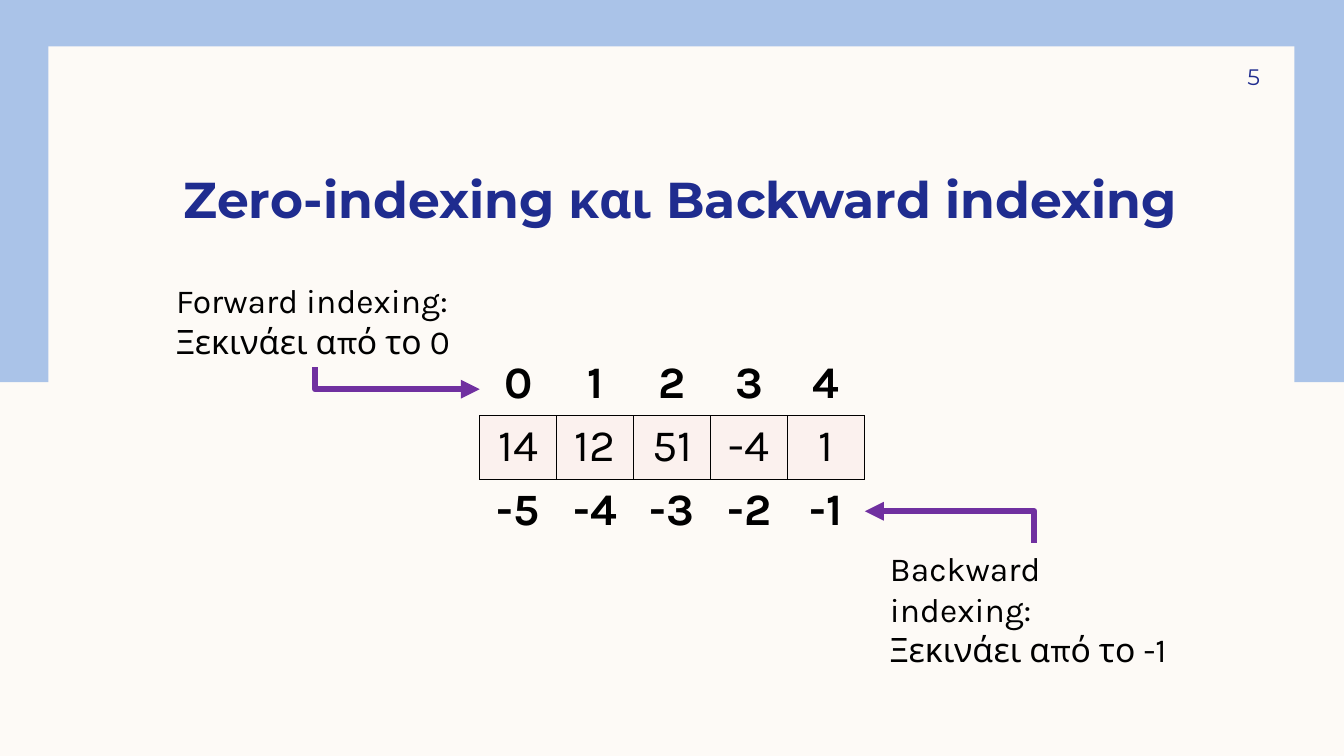
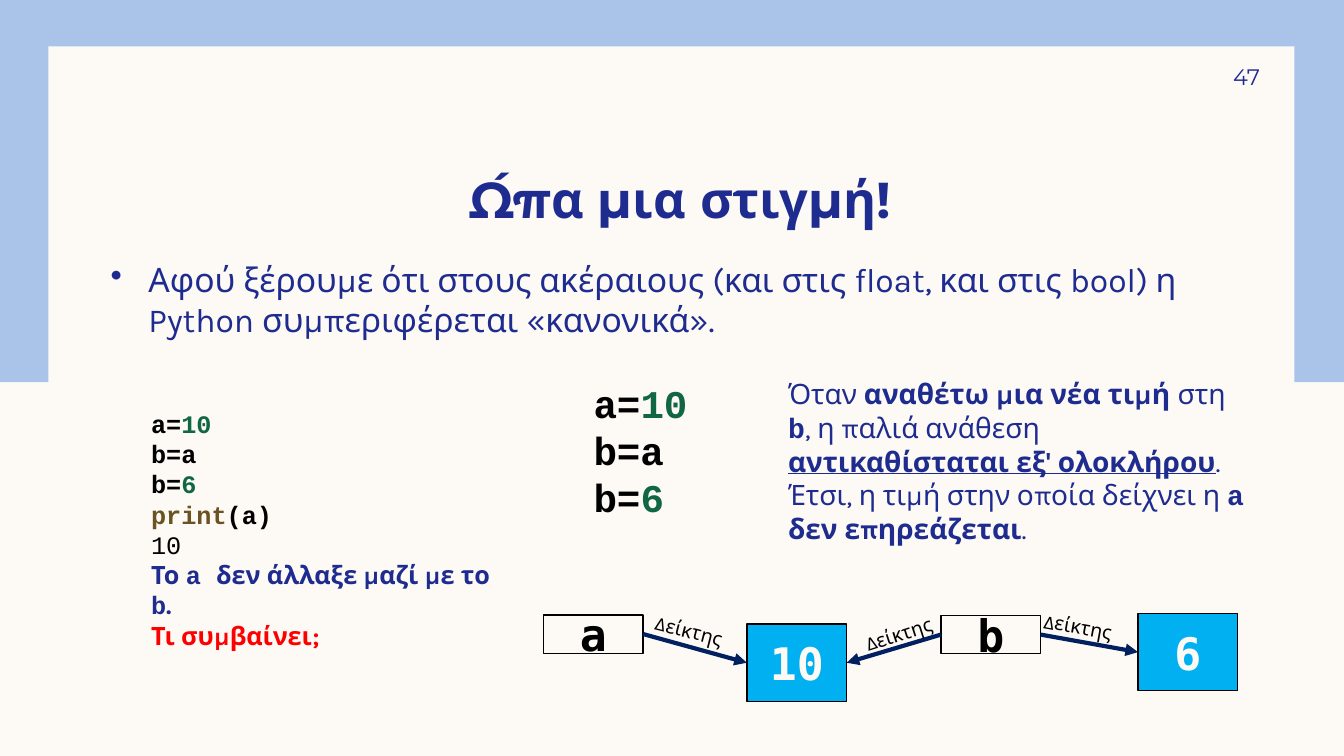
"""Build two slides on list indexing and on how names point to values."""
from pptx import Presentation
from pptx.dml.color import RGBColor
from pptx.enum.shapes import MSO_CONNECTOR, MSO_SHAPE
from pptx.enum.text import MSO_ANCHOR, MSO_AUTO_SIZE, PP_ALIGN
from pptx.oxml.ns import qn
from pptx.util import Pt
from lxml import etree

RECT = MSO_SHAPE.RECTANGLE
LINE, ELBOW = MSO_CONNECTOR.STRAIGHT, MSO_CONNECTOR.ELBOW
TOP, MID, LOW = MSO_ANCHOR.TOP, MSO_ANCHOR.MIDDLE, MSO_ANCHOR.BOTTOM
LEFT, MIDST, RIGHT = PP_ALIGN.LEFT, PP_ALIGN.CENTER, PP_ALIGN.RIGHT

CREAM = RGBColor(0xFD, 0xFA, 0xF6)
SKY = RGBColor(0xAA, 0xC3, 0xE8)
NAVY = RGBColor(0x1F, 0x2C, 0x8F)
BLACK = RGBColor(0, 0, 0)
GREEN = RGBColor(0x11, 0x66, 0x44)
BROWN = RGBColor(0x6A, 0x52, 0x21)
RED = RGBColor(0xFF, 0, 0)
PINK = RGBColor(0xFB, 0xF1, 0xEE)
PURPLE = RGBColor(0x70, 0x30, 0xA0)
AZURE = RGBColor(0, 0xB0, 0xF0)
INK = RGBColor(0x00, 0x20, 0x60)
HEAD, BODY, CODE, MONO = "Montserrat", "Karla", "Courier New", "DejaVu Sans Mono"
PLAIN_GRID = "{2D5ABB26-0587-4C30-8999-92F81FD0307C}"

STYLES = {
    "head": (HEAD, NAVY, True),
    "page": (HEAD, NAVY, False),
    "note": (BODY, BLACK, False),
    "index": (BODY, BLACK, True),
    "body": (BODY, NAVY, False),
    "bold": (BODY, NAVY, True),
    "under": (BODY, NAVY, True, True),
    "alert": (BODY, RED, True),
    "code": (CODE, BLACK, True),
    "num": (CODE, GREEN, True),
    "call": (CODE, BROWN, True),
    "out": (CODE, BLACK, False),
    "var": (CODE, NAVY, True),
    "name": (MONO, BLACK, True),
    "value": (MONO, CREAM, True),
}

BANDS = [((-2, 0, 962, 273), SKY), ((34.6, 33.1, 890, 474.5), CREAM)]
TITLE = (72, 83.5, 828, 80)
PAGE = (815.8, 36, 84.2, 37.4)

GRID = [
    ["0", "1", "2", "3", "4"],
    ["14", "12", "51", "-4", "1"],
    ["-5", "-4", "-3", "-2", "-1"],
]
GRID_AT, CELL = (342.7, 251.3), (55, 45.6)
NOTES = [
    ((118.8, 196.6, 212.4, 65.5), ["Forward indexing:", "Ξεκινάει από το 0"]),
    ((628.6, 388.1, 220.3, 65.5), ["Backward indexing:", "Ξεκινάει από το -1"]),
]
BENDS = [((342.7, 278), (225.2, 262.1)), ((617.8, 365.2), (738.8, 388.1))]

POINT = ("Αφού ξέρουμε ότι στους ακέραιους (και στις float, και στις bool) η "
         "Python συμπεριφέρεται «κανονικά».")
START = [[("a=", "code"), ("10", "num")], [("b=a", "code")],
         [("b=", "code"), ("6", "num")]]
RESULT = START + [
    [("print", "call"), ("(a)", "code")],
    [("10", "out")],
    [("Το ", "bold"), ("a ", "var"), ("δεν άλλαξε μαζί με το ", "bold"),
     ("b", "var"), (".", "bold")],
    [("Τι συμβαίνει;", "alert")],
]
REASON = [
    [("Όταν ", "body"), ("αναθέτω μια νέα τιμή ", "bold"), ("στη ", "body"),
     ("b", "var"), (", η παλιά ανάθεση ", "body"),
     ("αντικαθίσταται εξ' ολοκλήρου", "under"), (".", "body")],
    [("Έτσι, η τιμή στην οποία δείχνει η ", "body"), ("a ", "var"),
     ("δεν επηρεάζεται", "bold"), (".", "body")],
]
BLOCKS = [
    ((100.8, 288, 272.2, 159.8), RESULT, 18),
    ((416.9, 267.1, 81.4, 108.7), START, 28),
    ((555.8, 265.7, 344.2, 128.2), REASON, 20),
]
NAME, VALUE, LABEL = (71.3, 27.4), (71.3, 55.4), (82.8, 24.5)
NAMES = {"a": (388.1, 439.2), "b": (672.1, 439.6)}
VALUES = {"10": (533.5, 445.7), "6": (812.9, 438.1)}
LINKS = [
    ("a", "10", (450.7, 438.5), 14.3),
    ("b", "10", (600.5, 440.6), -17.9),
    ("b", "6", (728.6, 435.6), 10.4),
]


def place(box):
    return [Pt(n) for n in box]


def style(font, key):
    font.name, font.color.rgb, font.bold, *under = STYLES[key]
    if under:
        font.underline = True


def fill_text(frame, paras, size, align=LEFT, anchor=TOP, inset=(7.2, 3.6, 7.2, 3.6)):
    frame.word_wrap = True
    frame.auto_size = MSO_AUTO_SIZE.NONE
    frame.vertical_anchor = anchor
    (frame.margin_left, frame.margin_top,
     frame.margin_right, frame.margin_bottom) = place(inset)
    for i, runs in enumerate(paras):
        para = frame.add_paragraph() if i else frame.paragraphs[0]
        para.alignment = align
        para.font.size = Pt(size)
        same = len({key for _, key in runs}) == 1
        if same:
            style(para.font, runs[0][1])
        for words, key in runs:
            run = para.add_run()
            run.text = words
            if not same:
                style(run.font, key)


def add_text(slide, box, paras, size, **opts):
    shape = slide.shapes.add_textbox(*place(box))
    fill_text(shape.text_frame, paras, size, **opts)
    return shape


def add_box(slide, box, color=None, edge=None):
    shape = slide.shapes.add_shape(RECT, *place(box))
    shape.shadow.inherit = False
    if color is None:
        shape.fill.background()
    else:
        shape.fill.solid()
        shape.fill.fore_color.rgb = color
    if edge is None:
        shape.line.fill.background()
    else:
        shape.line.color.rgb = edge
        shape.line.width = Pt(1)
    return shape


def add_arrow(slide, tip, end, color, width, kind=LINE):
    """Draw an arrow whose head is at tip; a bent one leaves tip sideways."""
    arrow = slide.shapes.add_connector(kind, *place(tip + end))
    arrow.line.color.rgb = color
    arrow.line.width = Pt(width)
    props = arrow.element.spPr
    etree.SubElement(props.find(qn("a:ln")), qn("a:headEnd"), type="triangle")
    etree.SubElement(props, qn("a:effectLst"))
    if kind == ELBOW:
        props.find(qn("a:prstGeom")).set("prst", "bentConnector2")


def add_edges(cell):
    props = cell._tc.get_or_add_tcPr()
    for i, side in enumerate(("lnL", "lnR", "lnT", "lnB")):
        edge = etree.Element(qn("a:" + side), w=str(Pt(1)))
        solid = etree.SubElement(edge, qn("a:solidFill"))
        etree.SubElement(solid, qn("a:srgbClr"), val=str(BLACK))
        props.insert(i, edge)


def add_grid(slide):
    rows, cols = len(GRID), len(GRID[0])
    size = (cols * CELL[0], rows * CELL[1])
    frame = slide.shapes.add_table(rows, cols, *place(GRID_AT + size))
    table = frame.table
    table.first_row = table.horz_banding = False
    for mark in frame.element.iter(qn("a:tableStyleId")):
        mark.text = PLAIN_GRID
    for r, row in enumerate(GRID):
        for c, words in enumerate(row):
            cell = table.cell(r, c)
            para = cell.text_frame.paragraphs[0]
            para.text = words
            para.alignment = MIDST
            para.font.size = Pt(32)
            style(para.font, "note" if r == 1 else "index")
            if r == 1:
                cell.fill.solid()
                cell.fill.fore_color.rgb = PINK
                add_edges(cell)


def add_slide(deck, title, page):
    slide = deck.slides.add_slide(deck.slide_layouts[5])
    head = slide.shapes.title
    head.left, head.top, head.width, head.height = place(TITLE)
    fill_text(head.text_frame, [[(title, "head")]], 36, align=MIDST, anchor=LOW,
              inset=(7.2, 0, 7.2, 0))
    add_text(slide, PAGE, [[(page, "page")]], 16, align=RIGHT, anchor=MID,
             inset=(7.2, 3.6, 0, 3.6))
    return slide


def set_layout(deck, slide):
    """Move the bands to the layout that all slides share."""
    layout = slide.slide_layout
    layout.background.fill.solid()
    layout.background.fill.fore_color.rgb = CREAM
    for box, color in BANDS:
        layout.shapes.element.append(add_box(slide, box, color).element)


def index_slide(deck):
    slide = add_slide(deck, "Zero-indexing και Backward indexing", "5")
    set_layout(deck, slide)
    add_grid(slide)
    for box, lines in NOTES:
        add_text(slide, box, [[(line, "note")] for line in lines], 24)
    for tip, end in BENDS:
        add_arrow(slide, tip, end, PURPLE, 4.5, ELBOW)


def add_point(slide):
    shape = add_text(slide, (72, 177.8, 828, 80), [[(POINT, "body")]], 24,
                     inset=(7.2,) * 4)
    para = shape.text_frame.paragraphs[0]
    para.space_before = Pt(10)
    props = para._p.get_or_add_pPr()
    props.set("marL", str(Pt(27)))
    props.set("indent", str(Pt(-27)))
    mark = etree.Element(qn("a:buChar"), char="•")
    props.find(qn("a:defRPr")).addprevious(mark)


def name_slide(deck):
    slide = add_slide(deck, "Ώπα μια στιγμή!", "47")
    add_point(slide)
    for box, paras, size in BLOCKS:
        add_text(slide, box, paras, size)
    for spots, size, key, color in ((NAMES, NAME, "name", None),
                                    (VALUES, VALUE, "value", AZURE)):
        for words, spot in spots.items():
            box = add_box(slide, spot + size, color, BLACK)
            fill_text(box.text_frame, [[(words, key)]], 32, align=MIDST, anchor=MID)
    for name, value, spot, turn in LINKS:
        (x, y), (u, v) = NAMES[name], VALUES[value]
        ahead = u > x
        tip = (u if ahead else u + VALUE[0], v + VALUE[1] / 2)
        end = (x + NAME[0] if ahead else x, y + NAME[1] / 2)
        add_arrow(slide, tip, end, INK, 3)
        label = add_text(slide, spot + LABEL, [[("Δείκτης", "note")]], 14, align=MIDST)
        label.rotation = turn


def main():
    deck = Presentation()
    deck.slide_width, deck.slide_height = Pt(960), Pt(540)
    index_slide(deck)
    name_slide(deck)
    deck.save("out.pptx")


if __name__ == "__main__":
    main()
